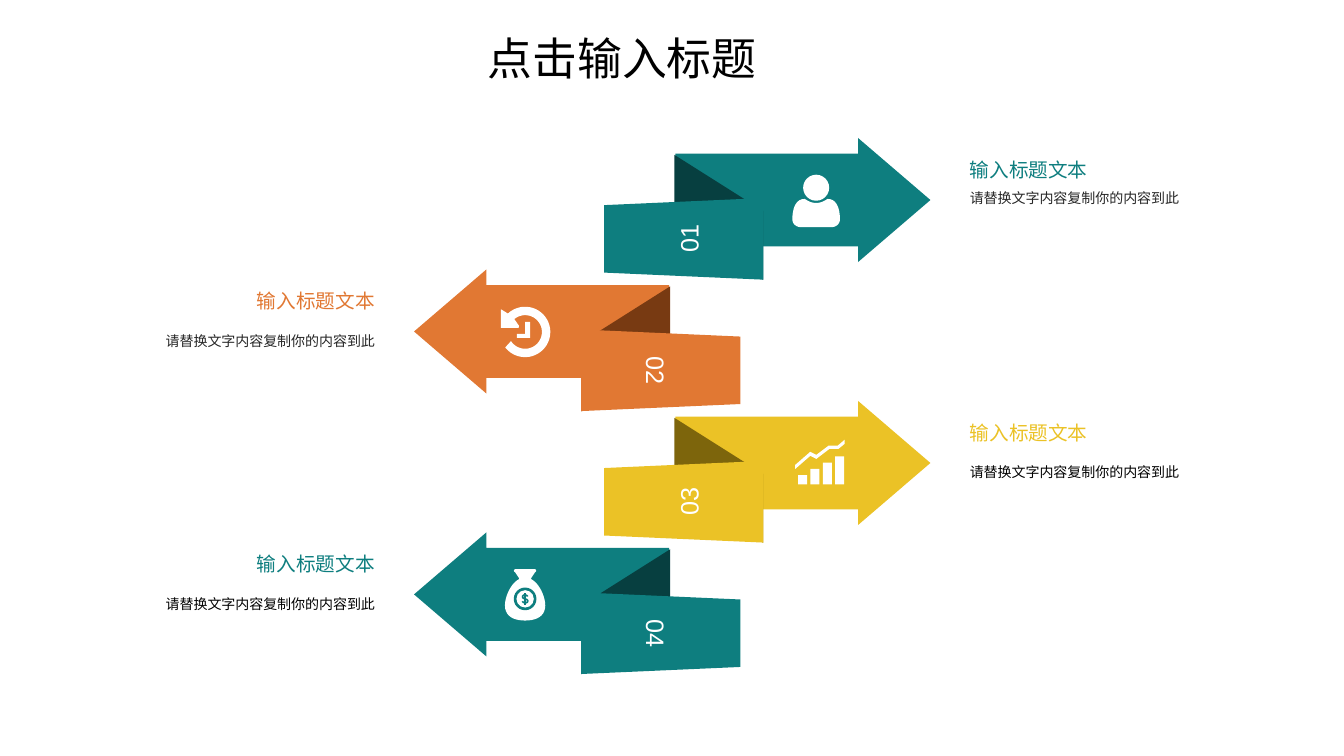
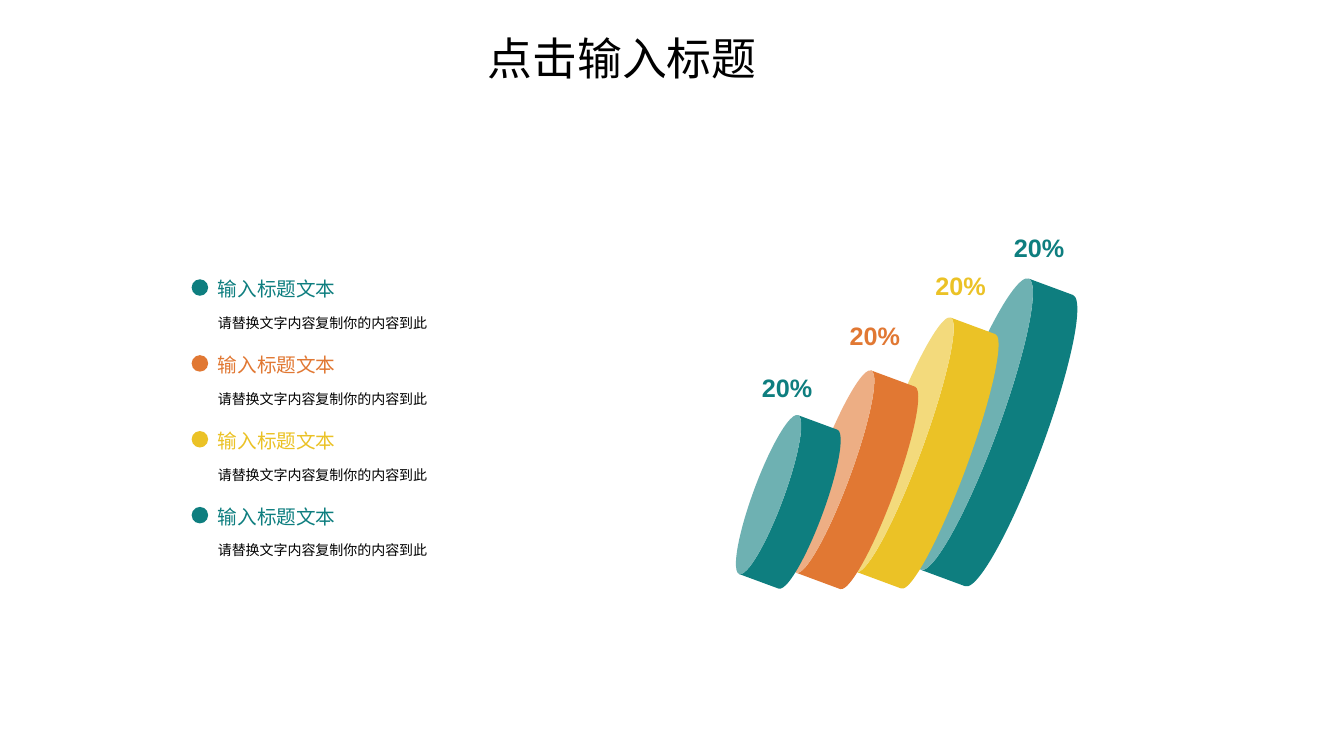
import math

import pptx
import pptx.dml.color
import pptx.enum.shapes
import pptx.enum.text
import pptx.util

Pt = pptx.util.Pt
RGBColor = pptx.dml.color.RGBColor
SHAPE = pptx.enum.shapes.MSO_SHAPE
ALIGN = pptx.enum.text.PP_ALIGN
ANCHOR = pptx.enum.text.MSO_ANCHOR

TEAL = RGBColor(0x0E, 0x7E, 0x7F)
ORANGE = RGBColor(0xE1, 0x78, 0x33)
YELLOW = RGBColor(0xEB, 0xC2, 0x26)
DARK_TEAL = RGBColor(0x07, 0x3F, 0x40)
DARK_ORANGE = RGBColor(0x78, 0x3A, 0x12)
DARK_YELLOW = RGBColor(0x7D, 0x65, 0x0C)
WHITE = RGBColor(0xFF, 0xFF, 0xFF)
BLACK = RGBColor(0, 0, 0)
CHARCOAL = RGBColor(0x26, 0x26, 0x26)

BODY_FONT = "Arial"
TITLE_FONT = "Noto Sans CJK SC"
SLIDE_TITLE = "点击输入标题"
HEADING = "输入标题文本"
DESCRIPTION = "请替换文字内容复制你的内容到此"

AXIS = 480.2
RIBBON_TOP = 98.6
RIBBON_STEP = 93.9
LABEL_WIDTH = 228
LABEL_INSET = 28.1
LEGEND_TOP = 194.2
LEGEND_STEP = 54.2

PERSON_BODY = [
    (-10.5, 19.1), (-14, 19.1, -17, 17, -17, 13.3),
    (-17, 7.6, -15.5, -1.1, -8.3, -1.1), (-7.6, -1.1, -4.7, 1.8, 0, 1.8),
    (4.7, 1.8, 7.6, -1.1, 8.3, -1.1), (15.5, -1.1, 17, 7.6, 17, 13.3),
    (17, 17, 14, 19.1, 10.5, 19.1),
]
CLOCK_HANDS = [(0, -7.2), (3.6, -7.2), (3.6, 4.3), (-5.8, 4.3), (-5.8, 1.4), (0, 1.4)]
TREND_LINE = [
    (13, -12.6), (6.5, -12.6), (-2.2, -6.1), (-6.5, -8.3), (-17.3, 1.1), (-17.3, 4),
    (-6.5, -5.4), (-2.2, -3.2), (7.2, -10.4), (13.7, -10.4), (18, -14), (18, -16.9),
]
MONEY_BAG = [
    (4.3, -11.9), (7.2, -16.2), (8.6, -16.9, 7.9, -18.4, 6.5, -18.4),
    (-6.5, -18.4), (-7.9, -18.4, -8.6, -16.9, -7.2, -16.2), (-4.3, -11.9),
    (-4.3, -11.2), (-10.1, -8.3, -14.4, 1.1, -14.4, 7.6),
    (-14.4, 15.5, -7.9, 18.4, 0, 18.4), (7.9, 18.4, 14.4, 15.5, 14.4, 7.6),
    (14.4, 1.1, 10.1, -8.3, 4.3, -11.2),
]
DOLLAR_CURVE = [
    (1.8, -1.7), (1.2, -3.2, -1.9, -3.2, -1.8, -1.4),
    (-1.8, 0.2, 1.9, -0.2, 1.9, 1.5), (1.9, 3.2, -1.4, 3.2, -1.9, 1.6),
]


def style_fill(shape, color):
    shape.shadow.inherit = False
    shape.fill.solid()
    shape.fill.fore_color.rgb = color
    shape.line.fill.background()


def add_filled(slide, kind, left, top, width, height, color,
               adjustments=(), rotation=0, flip=""):
    shape = slide.shapes.add_shape(kind, Pt(left), Pt(top), Pt(width), Pt(height))
    style_fill(shape, color)
    for index, value in enumerate(adjustments):
        shape.adjustments[index] = value
    shape.rotation = rotation
    for direction in flip:
        shape._element.spPr.get_or_add_xfrm().set("flip" + direction, "1")
    return shape


def set_text(shape, text, size, color, font=BODY_FONT, bold=False, align=ALIGN.LEFT,
             anchor=ANCHOR.TOP, wrap=True, spacing=None):
    frame = shape.text_frame
    frame.text = text
    frame.word_wrap = wrap
    frame.vertical_anchor = anchor
    paragraph = frame.paragraphs[0]
    paragraph.alignment = align
    if spacing:
        paragraph.line_spacing = spacing
    run = paragraph.runs[0]
    run.font.size = Pt(size)
    run.font.bold = bold
    run.font.name = font
    run.font.color.rgb = color
    east_asian = run.font._element.makeelement(pptx.oxml.ns.qn("a:ea"), {"typeface": font})
    run.font._element.append(east_asian)


def add_text(slide, left, top, width, height, text, size, color, side_inset=None, **style):
    box = slide.shapes.add_textbox(Pt(left), Pt(top), Pt(width), Pt(height))
    if side_inset is not None:
        frame = box.text_frame
        frame.margin_left = frame.margin_right = Pt(side_inset)
        frame.margin_top = frame.margin_bottom = 0
    set_text(box, text, size, color, **style)


def trace(path, steps=10):
    points = []
    for segment in path:
        if len(segment) == 2:
            points.append(segment)
            continue
        controls = [points[-1], segment[:2], segment[2:4], segment[4:]]
        for step in range(1, steps + 1):
            t = step / steps
            weights = ((1 - t) ** 3, 3 * t * (1 - t) ** 2, 3 * t * t * (1 - t), t ** 3)
            points.append(tuple(
                sum(weight * point[axis] for weight, point in zip(weights, controls))
                for axis in (0, 1)))
    return points


def add_outline(slide, center_x, center_y, path, closed=True):
    points = [(Pt(center_x + x), Pt(center_y + y)) for x, y in trace(path)]
    builder = slide.shapes.build_freeform(*points[0])
    builder.add_line_segments(points[1:], close=closed)
    return builder.convert_to_shape()


def add_silhouette(slide, center_x, center_y, path):
    style_fill(add_outline(slide, center_x, center_y, path), WHITE)


def add_stroke(slide, center_x, center_y, path, color, width):
    shape = add_outline(slide, center_x, center_y, path, closed=False)
    shape.shadow.inherit = False
    shape.fill.background()
    shape.line.color.rgb = color
    shape.line.width = Pt(width)


def add_disc(slide, center_x, center_y, radius, color):
    add_filled(slide, SHAPE.OVAL, center_x - radius, center_y - radius,
               2 * radius, 2 * radius, color)


def arc(radius, start, end, steps=40):
    angles = [math.radians(start + (end - start) * step / steps) for step in range(steps + 1)]
    return [(radius * math.cos(angle), radius * math.sin(angle)) for angle in angles]


def draw_person(slide, x, y):
    add_disc(slide, x - 2.3, y - 9.1, 9.3, WHITE)
    add_silhouette(slide, x - 2.3, y, PERSON_BODY)


def draw_history(slide, x, y):
    arrow_tip = [(-17.3, -16.2), (-17.3, -2.9), (-4.7, -2.9), (-4.3, -4.3)]
    ring = arc(18, 142, -133) + arrow_tip + arc(12, -130, 147)
    add_silhouette(slide, x, y, ring)
    add_silhouette(slide, x, y, CLOCK_HANDS)


def draw_growth(slide, x, y):
    for index in range(4):
        height = 6.6 + 4.5 * index
        add_filled(slide, SHAPE.RECTANGLE, x - 15.2 + 8.8 * index, y + 15 - height,
                   6.5, height, WHITE)
    add_silhouette(slide, x, y, TREND_LINE)


def draw_money(slide, x, y):
    coin_y = y + 2.9
    add_silhouette(slide, x, y, MONEY_BAG)
    add_disc(slide, x, coin_y, 8.1, TEAL)
    add_disc(slide, x, coin_y, 6.2, WHITE)
    add_stroke(slide, x, coin_y, DOLLAR_CURVE, TEAL, 1.2)
    add_stroke(slide, x, coin_y, [(0, -4.2), (0, 4.2)], TEAL, 0.9)


def add_ribbon(slide, index, color, fold_color, draw_icon, text_color, body_offset):
    top = RIBBON_TOP + RIBBON_STEP * index
    points_right = index % 2 == 0

    def place(offset, width):
        return AXIS + offset if points_right else AXIS - offset - width

    align = ALIGN.LEFT if points_right else ALIGN.RIGHT
    add_filled(slide, SHAPE.RIGHT_ARROW, place(2.2, 182.2), top, 182.2, 88.6, color,
               (0.748, 0.583), flip="" if points_right else "H")
    add_filled(slide, SHAPE.PARALLELOGRAM, place(-11.5, 89.3), top + 25, 89.3, 63.4,
               fold_color, (0.632,), 90 if points_right else 270,
               "HV" if points_right else "V")
    band = add_filled(slide, SHAPE.TRAPEZOID, place(-20.9, 58.3), top + 15.1, 58.3, 113.8,
                      color, (0.087,), 270 if points_right else 90,
                      "" if points_right else "H")
    set_text(band, f"{index + 1:02d}", 18, WHITE, align=ALIGN.CENTER,
             anchor=ANCHOR.MIDDLE, wrap=False)
    draw_icon(slide, place(105.1, 0), top + 44.6)
    label_left = place(184.4, LABEL_WIDTH)
    add_text(slide, label_left, top + 10.2, LABEL_WIDTH, 24.5, HEADING, 14, color,
             LABEL_INSET, align=align, anchor=ANCHOR.MIDDLE)
    add_text(slide, label_left, top + 10.2 + body_offset, LABEL_WIDTH, 36, DESCRIPTION, 10,
             text_color, LABEL_INSET, align=align, spacing=1.2)


def add_legend_row(slide, index, color):
    top = LEGEND_TOP + LEGEND_STEP * index
    add_disc(slide, 142.8, top + 11.2, 5.9, color)
    add_text(slide, 148.5, top, 303, 24.5, HEADING, 14, color)
    add_text(slide, 148.5, top + 24.4, 303, 36.7, DESCRIPTION, 10, BLACK, spacing=1.2)


def add_can(slide, left, top, width, height, depth, color):
    add_filled(slide, SHAPE.CAN, left, top, width, height, color, (depth,), 290.3, "H")


def add_titled_slide(presentation):
    slide = presentation.slides.add_slide(presentation.slide_layouts[6])
    add_text(slide, 341.3, 18.7, 213, 46, SLIDE_TITLE, 32, BLACK,
             font=TITLE_FONT, wrap=False)
    return slide


def build_ribbon_slide(presentation):
    slide = add_titled_slide(presentation)
    ribbons = [
        (TEAL, DARK_TEAL, draw_person, CHARCOAL, 24.4),
        (ORANGE, DARK_ORANGE, draw_history, CHARCOAL, 32.4),
        (YELLOW, DARK_YELLOW, draw_growth, BLACK, 32.4),
        (TEAL, DARK_TEAL, draw_money, BLACK, 32.4),
    ]
    for index, ribbon in enumerate(ribbons):
        add_ribbon(slide, index, *ribbon)


def build_can_slide(presentation):
    slide = add_titled_slide(presentation)
    cans = [
        (601.2, 275, 221.8, 67.7, 0.5, TEAL),
        (564.5, 293, 193.7, 61.2, 0.442, YELLOW),
        (534.2, 313.9, 154.1, 57.6, 0.42, ORANGE),
        (502.6, 332.6, 121, 51.8, 0.42, TEAL),
    ]
    for can in cans:
        add_can(slide, *can)
    for index, color in enumerate((TEAL, ORANGE, YELLOW, TEAL)):
        add_legend_row(slide, index, color)
    percentages = [(537.1, 262.1, TEAL), (599.8, 225.4, ORANGE),
                   (661, 189.4, YELLOW), (717.1, 162.7, TEAL)]
    for left, top, color in percentages:
        add_text(slide, left, top, 51, 28.8, "20%", 18, color, bold=True, wrap=False)


def main():
    presentation = pptx.Presentation()
    presentation.slide_width = Pt(960)
    presentation.slide_height = Pt(540)
    build_ribbon_slide(presentation)
    build_can_slide(presentation)
    presentation.save("out.pptx")


if __name__ == "__main__":
    main()
